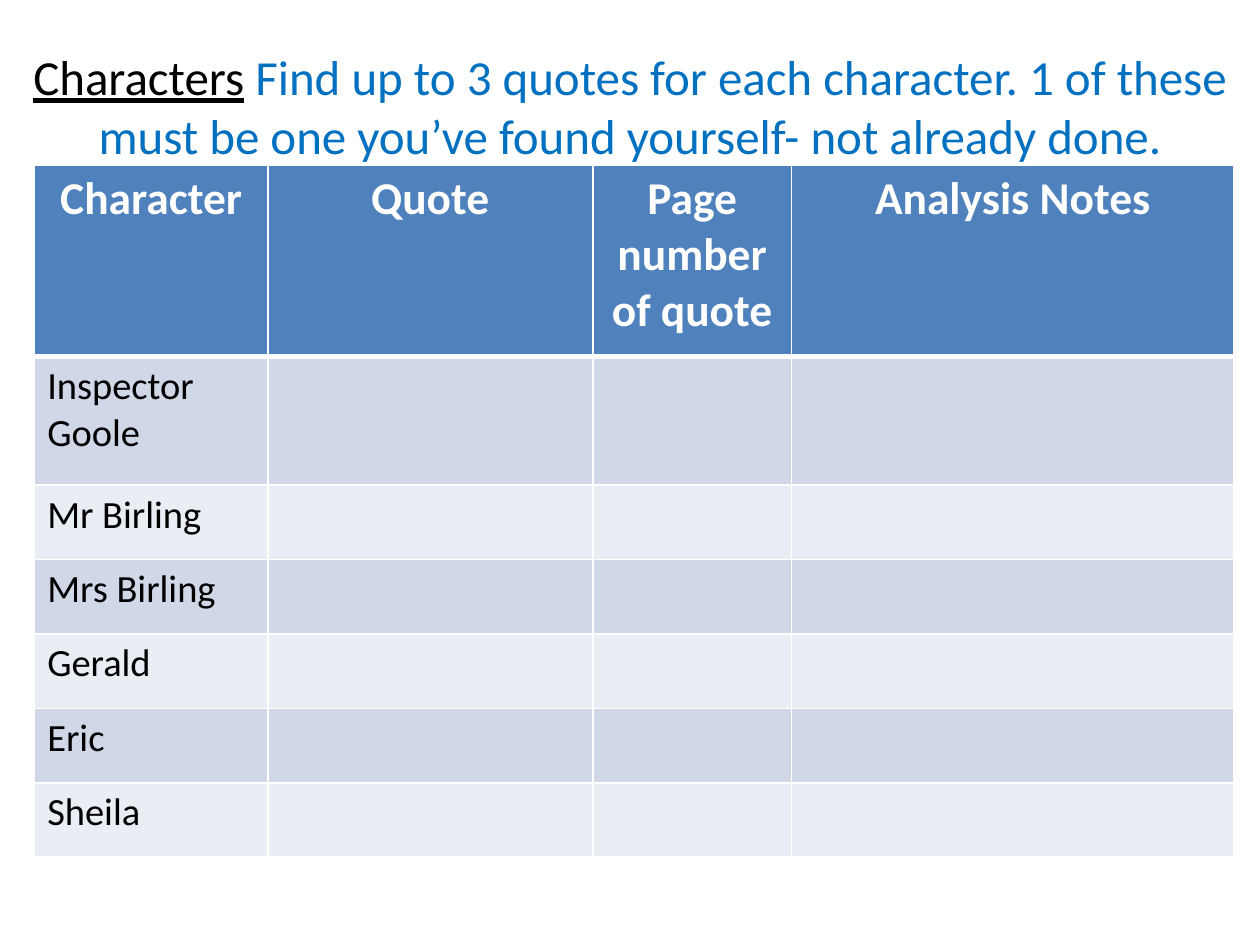
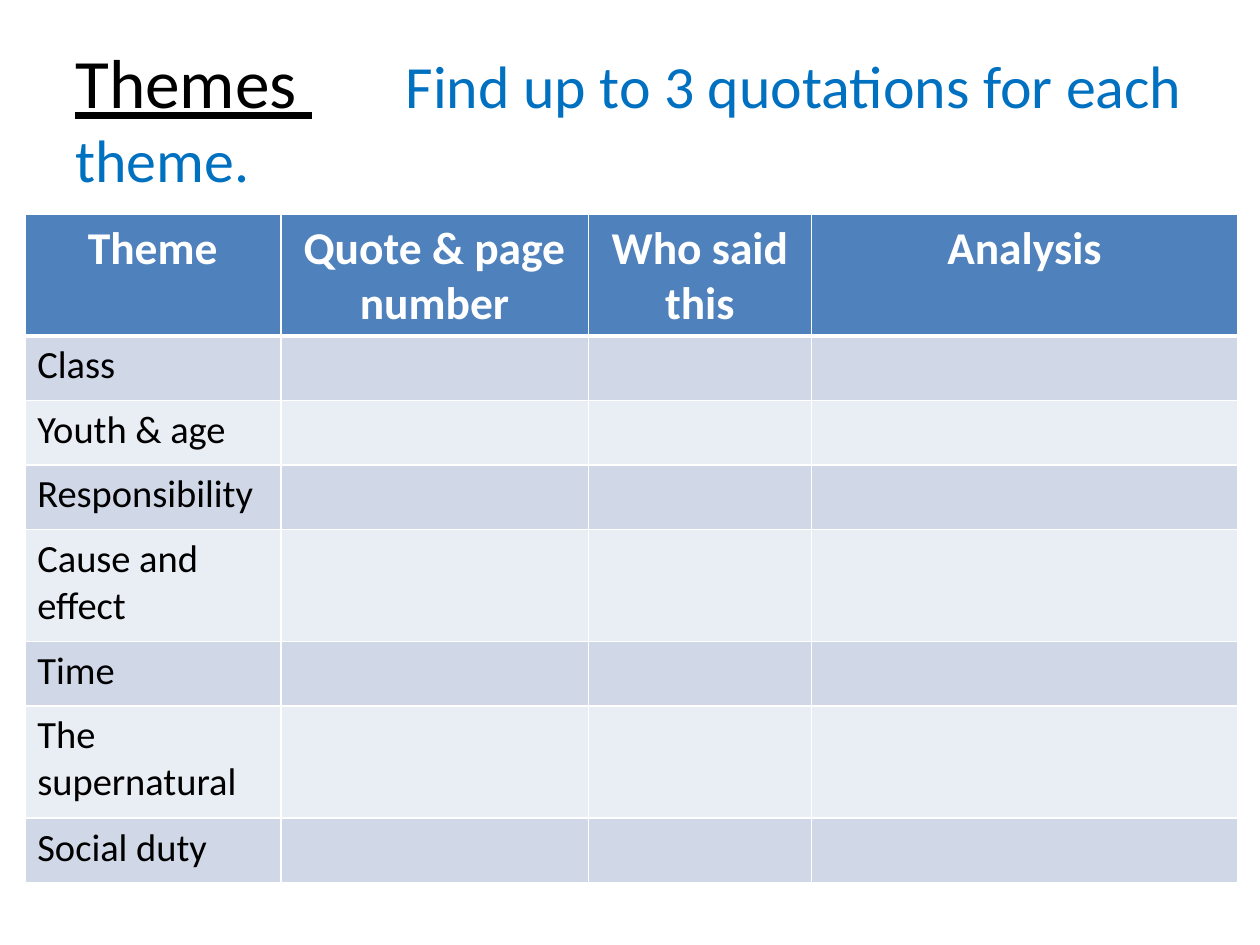
from dataclasses import dataclass

from pptx import Presentation
from pptx.dml.color import RGBColor
from pptx.enum.text import MSO_ANCHOR, PP_ALIGN
from pptx.oxml.ns import qn
from pptx.util import Cm, Pt
from lxml.etree import SubElement


@dataclass(frozen=True)
class Theme:
    """Colours, font and type sizes shared by both pages."""
    font: str = "Calibri"
    ink: str = "000000"
    paper: str = "FFFFFF"
    accent: str = "0070C0"
    header: str = "4F81BD"
    bands: tuple = ("D0D8E8", "E9EDF4")
    header_size: float = 26
    body_size: float = 22
    border: float = 1
    header_rule: float = 3


THEME = Theme()


def add_span(para, text, *, size, color=THEME.ink, bold=False, underline=False):
    """Append formatted text to a paragraph."""
    span = para.add_run()
    span.text = text
    span.font.name = THEME.font
    span.font.size = Pt(size)
    span.font.color.rgb = RGBColor.from_string(color)
    span.font.bold = bold
    span.font.underline = underline


def add_tab_stop(para, position):
    """Give a paragraph one left tab stop."""
    stops = SubElement(para._p.get_or_add_pPr(), qn("a:tabLst"))
    SubElement(stops, qn("a:tab"), pos=str(position), algn="l")


def add_title(page, left, top, width, topic, task, *, topic_size, task_size,
              align=PP_ALIGN.LEFT, gap=" ", tab=None):
    """Add an underlined topic followed by its task."""
    box = page.shapes.add_textbox(Cm(left), Cm(top), Cm(width), Cm(3.18))
    frame = box.text_frame
    frame.word_wrap = True
    frame.vertical_anchor = MSO_ANCHOR.MIDDLE
    para = frame.paragraphs[0]
    para.alignment = align
    if tab:
        add_tab_stop(para, Cm(tab))
    add_span(para, topic, size=topic_size, underline=True)
    add_span(para, gap, size=topic_size)
    add_span(para, task, size=task_size, color=THEME.accent)


def set_borders(cell, bottom):
    """Draw the four borders of a cell, the bottom one with its own width."""
    properties = cell._tc.get_or_add_tcPr()
    widths = {"a:lnL": THEME.border, "a:lnR": THEME.border,
              "a:lnT": THEME.border, "a:lnB": bottom}
    for index, (tag, width) in enumerate(widths.items()):
        line = properties.makeelement(qn(tag), {"w": str(Pt(width))})
        fill = SubElement(line, qn("a:solidFill"))
        SubElement(fill, qn("a:srgbClr"), val=THEME.paper)
        properties.insert(index, line)


def style_cell(cell, fill, bottom=THEME.border):
    """Fill and outline a cell."""
    cell.fill.solid()
    cell.fill.fore_color.rgb = RGBColor.from_string(fill)
    set_borders(cell, bottom)


def add_worksheet(page, left, top, headings, widths, header_height, entries):
    """Add a table with headings, named rows and empty cells to write in."""
    heights = [header_height] + [height for _, height in entries]
    table = page.shapes.add_table(
        len(heights), len(widths), Cm(left), Cm(top),
        Cm(sum(widths)), Cm(sum(heights))).table
    for column, width in zip(table.columns, widths):
        column.width = Cm(width)
    for row, height in zip(table.rows, heights):
        row.height = Cm(height)
    for cell, heading in zip(table.rows[0].cells, headings):
        style_cell(cell, THEME.header, THEME.header_rule)
        para = cell.text_frame.paragraphs[0]
        para.alignment = PP_ALIGN.CENTER
        add_span(para, heading, size=THEME.header_size, color=THEME.paper, bold=True)
    for index, (name, _) in enumerate(entries):
        cells = list(table.rows[index + 1].cells)
        for cell in cells:
            style_cell(cell, THEME.bands[index % 2])
        add_span(cells[0].text_frame.paragraphs[0], name, size=THEME.body_size)


def build_characters(page):
    """Build the worksheet on characters."""
    add_title(page, 0.3, 0.53, 24.8, "Characters",
              "Find up to 3 quotes for each character. 1 of these must be one "
              "you’ve found yourself- not already done.",
              topic_size=28, task_size=28, align=PP_ALIGN.CENTER)
    names = ["Mr Birling", "Mrs Birling", "Gerald", "Eric", "Sheila"]
    add_worksheet(page, 0.7, 3.33,
                  ["Character", "Quote", "Page number of quote", "Analysis Notes"],
                  [4.7, 6.55, 4.01, 8.92], 3.86,
                  [("Inspector Goole", 2.59)] + [(name, 1.5) for name in names])


def build_themes(page):
    """Build the worksheet on themes."""
    add_title(page, 1.27, 0.76, 22.86, "Themes ",
              "Find up to 3 quotations for each theme.",
              topic_size=39.6, task_size=34.2, gap="\t", tab=6.66)
    single, double = 1.3, 2.26
    add_worksheet(page, 0.5, 4.32,
                  ["Theme", "Quote & page number", "Who said this", "Analysis"],
                  [5.16, 6.2, 4.5, 8.59], double,
                  [("Class", single), ("Youth & age", single),
                   ("Responsibility", single), ("Cause and effect", double),
                   ("Time", single), ("The supernatural", double),
                   ("Social duty", single)])


def main():
    """Build and save the deck."""
    deck = Presentation()
    deck.slide_width, deck.slide_height = Cm(25.4), Cm(19.05)
    for build in (build_characters, build_themes):
        build(deck.slides.add_slide(deck.slide_layouts[6]))
    deck.save("out.pptx")


if __name__ == "__main__":
    main()
